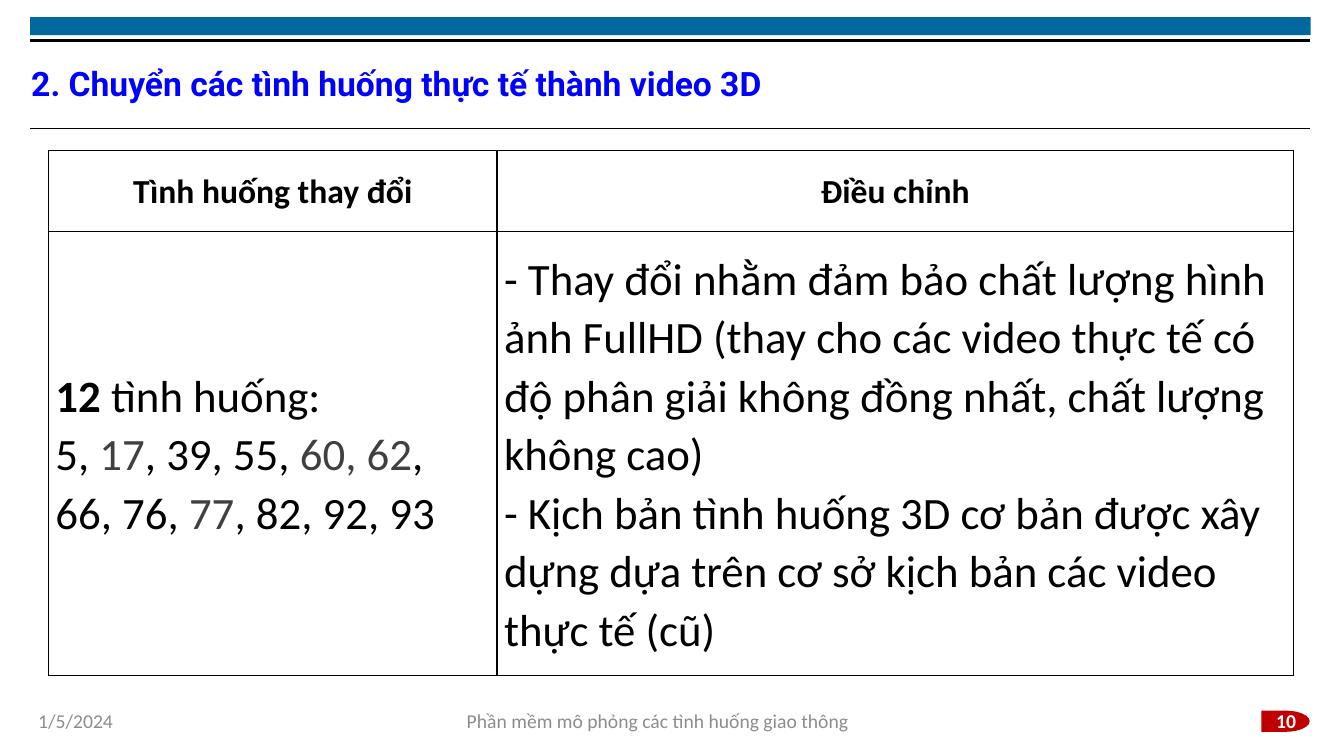
from dataclasses import dataclass, field

from lxml import etree
from pptx import Presentation
from pptx.dml.color import RGBColor
from pptx.enum.shapes import MSO_CONNECTOR as Link, MSO_SHAPE as Form
from pptx.enum.text import MSO_ANCHOR as Anchor, PP_ALIGN as Align
from pptx.oxml.ns import qn
from pptx.util import Emu, Pt

PX = 9144  # 100 px to the inch
BLACK, WHITE, GREY, DARK = "000000", "FFFFFF", "8C8C8C", "404040"
RED, TEAL, BLUE = "C00000", "00689D", "0000FF"


@dataclass
class Run:
    text: str
    color: str = BLACK
    size: int = 32
    bold: bool = False
    font: str = "Calibri"


@dataclass
class Para:
    runs: list[Run]
    align: Align = Align.LEFT
    space: float = 1.0


@dataclass
class Block:
    form: Form
    box: tuple[int, int, int, int]
    color: str


@dataclass
class Rule:
    top: int
    width: float


@dataclass
class Label:
    box: tuple[int, int, int, int]
    para: Para
    inset: dict[str, int] = field(default_factory=dict)


def px(num: int) -> Emu:
    return Emu(num * PX)


def rgb(code: str) -> RGBColor:
    return RGBColor.from_string(code)


def apply(target, values: dict) -> None:
    for name, value in values.items():
        setattr(target, name, value)


def write(frame, paras: list[Para]) -> None:
    for i, para in enumerate(paras):
        line = frame.add_paragraph() if i else frame.paragraphs[0]
        apply(line, {"alignment": para.align, "line_spacing": para.space})
        for run in para.runs:
            part = line.add_run()
            part.text = run.text
            apply(part.font, {"name": run.font, "size": Pt(run.size), "bold": run.bold})
            part.font.color.rgb = rgb(run.color)


def draw_block(slide, block: Block) -> None:
    shape = slide.shapes.add_shape(block.form, *map(px, block.box))
    shape.shadow.inherit = False
    shape.fill.solid()
    shape.fill.fore_color.rgb = rgb(block.color)
    shape.line.fill.background()


def draw_rule(slide, rule: Rule) -> None:
    ends = (30, rule.top, 1299, rule.top)
    line = slide.shapes.add_connector(Link.STRAIGHT, *map(px, ends))
    line.line.width = Pt(rule.width)
    line.line.color.rgb = rgb(BLACK)
    etree.SubElement(line.element.spPr, qn("a:effectLst"))


def draw_label(slide, label: Label) -> None:
    frame = slide.shapes.add_textbox(*map(px, label.box)).text_frame
    apply(frame, {"word_wrap": True, "vertical_anchor": Anchor.MIDDLE} | label.inset)
    write(frame, [label.para])


def add_edges(cell) -> None:
    """Give all four sides of a table cell a thin black border."""
    props = cell._tc.get_or_add_tcPr()
    for i, side in enumerate("LRTB"):
        edge = etree.Element(qn(f"a:ln{side}"), w=str(Pt(1)))
        fill = etree.SubElement(edge, qn("a:solidFill"))
        etree.SubElement(fill, qn("a:srgbClr"), val=BLACK)
        props.insert(i, edge)


def draw_table(slide, box: tuple, cols: list[int], rows: list[int],
               cells: list[list[list[Para]]]) -> None:
    table = slide.shapes.add_table(len(rows), len(cols), *map(px, box)).table
    apply(table, {"first_row": False, "horz_banding": False})
    for col, width in zip(table.columns, cols):
        col.width = px(width)
    for row, height, texts in zip(table.rows, rows, cells):
        row.height = px(height)
        for cell, paras in zip(row.cells, texts):
            apply(cell, {"vertical_anchor": Anchor.MIDDLE, "margin_left": px(7),
                         "margin_right": px(7), "margin_top": 0, "margin_bottom": 0})
            cell.fill.background()
            add_edges(cell)
            write(cell.text_frame, paras)


def head(text: str) -> list[Para]:
    return [Para([Run(text, size=24, bold=True)], Align.CENTER, 1.07)]


def body(*runs: Run) -> Para:
    return Para(list(runs), space=1.07)


def foot(text: str, left: int, width: int, align: Align = Align.CENTER,
         color: str = GREY, bold: bool = False) -> Label:
    return Label((left, 695, width, 40), Para([Run(text, color, 14, bold)], align))


BLOCKS = [
    Block(Form.RECTANGLE, (30, 17, 1270, 18), TEAL),
    Block(Form.FLOWCHART_DELAY, (1251, 705, 48, 21), RED),
]
RULES = [Rule(127, 0.6), Rule(40, 2.25)]
FLUSH = {f"margin_{side}": 0 for side in ("left", "right", "top", "bottom")}
TITLE = Run("2. Chuyển các tình huống thực tế thành video 3D", BLUE, 24, True, "Roboto")
LABELS = [
    Label((31, 50, 1269, 69), Para([TITLE], space=0.9), FLUSH),
    foot("1/5/2024", 28, 131, Align.LEFT),
    foot("Phần mềm mô phỏng các tình huống giao thông", 181, 943),
    foot("10", 1251, 49, color=WHITE, bold=True),
]
CASES = [
    body(Run("12 ", bold=True), Run("tình huống:")),
    body(Run("5, "), Run("17", DARK), Run(", 39, 55, "), Run("60, 62", DARK),
         Run(", 66, 76, "), Run("77", DARK), Run(", 82, 92, 93")),
]
CHANGES = [
    body(Run("- Thay đổi nhằm đảm bảo chất lượng hình ảnh FullHD (thay cho các video "
             "thực tế có độ phân giải không đồng nhất, chất lượng không cao)")),
    body(Run("- Kịch bản tình huống 3D cơ bản được xây dựng dựa trên cơ sở kịch bản "
             "các video thực tế (cũ)")),
]
CELLS = [[head("Tình huống thay đổi"), head("Điều chỉnh")], [CASES, CHANGES]]


def main() -> None:
    deck = Presentation()
    apply(deck, {"slide_width": px(1333), "slide_height": px(750)})
    slide = deck.slides.add_slide(deck.slide_layouts[6])
    for block in BLOCKS:
        draw_block(slide, block)
    for rule in RULES:
        draw_rule(slide, rule)
    for label in LABELS:
        draw_label(slide, label)
    draw_table(slide, (48, 149, 1235, 521), [445, 790], [81, 440], CELLS)
    deck.save("out.pptx")


if __name__ == "__main__":
    main()
